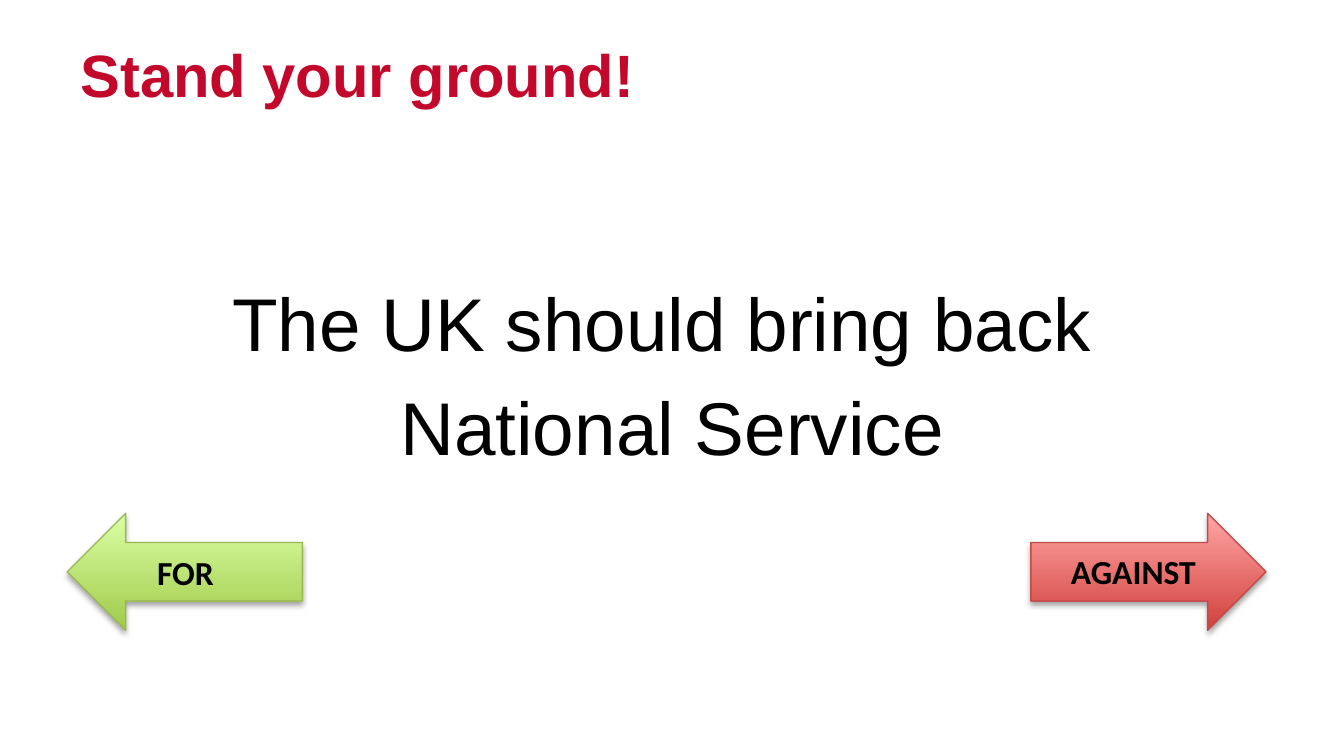
import pptx
import pptx.dml.color
import pptx.enum.shapes
import pptx.enum.text
import pptx.oxml
import pptx.oxml.ns
import pptx.util

Inches = pptx.util.Inches
Pt = pptx.util.Pt
RGBColor = pptx.dml.color.RGBColor
Arrow = pptx.enum.shapes.MSO_SHAPE
Align = pptx.enum.text.PP_ALIGN

CRIMSON = RGBColor(0xC3, 0x09, 0x2B)
BLACK = RGBColor(0x00, 0x00, 0x00)
GREEN_DARK = RGBColor(0xA0, 0xCA, 0x4A)
GREEN_LIGHT = RGBColor(0xDA, 0xFF, 0xA5)
GREEN_EDGE = RGBColor(0x98, 0xB9, 0x55)
RED_DARK = RGBColor(0xD1, 0x40, 0x3C)
RED_LIGHT = RGBColor(0xFF, 0xA6, 0xA5)
RED_EDGE = RGBColor(0xBF, 0x4C, 0x48)

SOFT_SHADOW = (
    f'<a:effectLst {pptx.oxml.ns.nsdecls("a")}>'
    f'<a:outerShdw blurRad="{Pt(3.1)}" dist="{Pt(1.8)}" dir="5400000" rotWithShape="0">'
    '<a:srgbClr val="000000"><a:alpha val="35000"/></a:srgbClr>'
    '</a:outerShdw></a:effectLst>'
)


class DebateSlide:
    heading_font = "Arial"
    label_font = "Calibri"
    margin = 0.5
    content_width = 9
    arrow_top, arrow_width, arrow_height = 3.82, 1.75, 0.87

    def __init__(self, slide):
        self.slide = slide

    def text(self, lines, left, top, width, height, size, font, color=BLACK,
             bold=False, align=Align.LEFT, wrap=True, gap=0):
        """Add a text box with one paragraph per line, gap points apart."""
        box = self.slide.shapes.add_textbox(
            Inches(left), Inches(top), Inches(width), Inches(height))
        frame = box.text_frame
        frame.word_wrap = wrap
        frame.text = "\n".join(lines)
        for index, paragraph in enumerate(frame.paragraphs):
            paragraph.alignment = align
            if index:
                paragraph.space_before = Pt(gap)
            for run in paragraph.runs:
                run.font.name = font
                run.font.size = Pt(size)
                run.font.bold = bold
                run.font.color.rgb = color
        return frame

    def title(self, wording):
        self.text([wording], self.margin, 0.23, self.content_width, 0.71, 32,
                  self.heading_font, CRIMSON, bold=True)

    def statement(self, lines):
        frame = self.text(lines, self.margin, 1.23, self.content_width, 3.46, 40,
                          self.heading_font, align=Align.CENTER, gap=8)
        frame.margin_top = Inches(0.83)

    def arrow(self, direction, left, dark, light, edge):
        arrow = self.slide.shapes.add_shape(
            direction, Inches(left), Inches(self.arrow_top),
            Inches(self.arrow_width), Inches(self.arrow_height))
        arrow.fill.gradient()
        arrow.fill.gradient_angle = 90
        for stop, color in zip(arrow.fill.gradient_stops, (dark, light)):
            stop.color.rgb = color
        arrow.line.color.rgb = edge
        arrow.line.width = Pt(0.75)
        arrow._element.spPr.append(pptx.oxml.parse_xml(SOFT_SHADOW))

    def label(self, wording, left, top, width):
        self.text([wording], left, top, width, 0.4, 18, self.label_font,
                  bold=True, wrap=False)


def main():
    presentation = pptx.Presentation()
    presentation.slide_width = Inches(10)
    presentation.slide_height = Inches(10 * 9 / 16)
    debate = DebateSlide(
        presentation.slides.add_slide(presentation.slide_layouts[6]))

    debate.title("Stand your ground!")
    debate.statement(["The UK should bring back ", "National Service"])
    debate.arrow(Arrow.LEFT_ARROW, 0.5, GREEN_DARK, GREEN_LIGHT, GREEN_EDGE)
    debate.arrow(Arrow.RIGHT_ARROW, 7.67, RED_DARK, RED_LIGHT, RED_EDGE)
    debate.label("FOR", 1.07, 4.06, 0.91)
    debate.label("AGAINST", 7.87, 4.05, 1.34)

    presentation.save("out.pptx")


if __name__ == "__main__":
    main()
